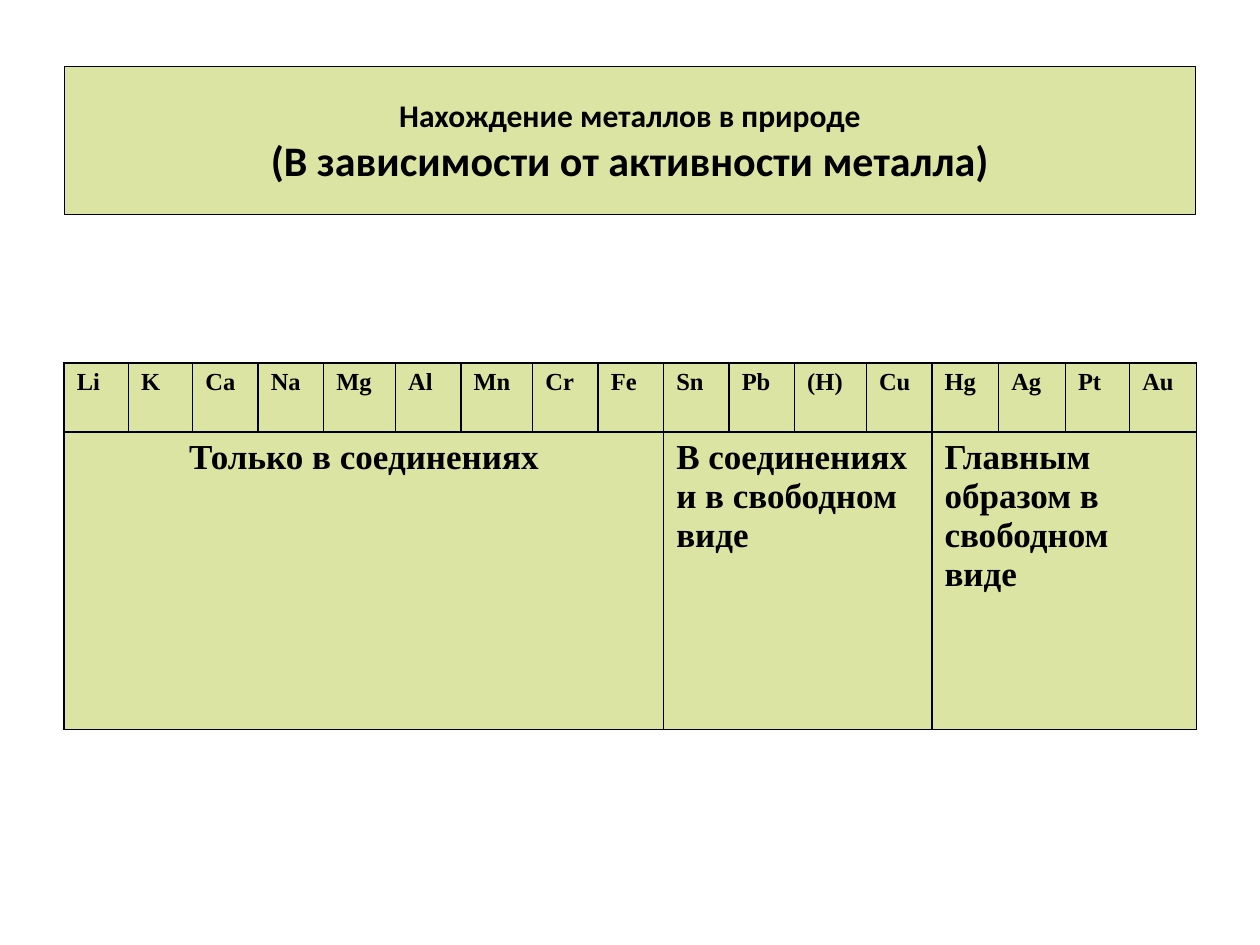
from dataclasses import dataclass

from lxml import etree
from pptx import Presentation
from pptx.dml.color import RGBColor
from pptx.enum.text import MSO_ANCHOR, MSO_AUTO_SIZE, PP_ALIGN
from pptx.oxml.ns import qn
from pptx.util import Inches, Pt

CENTER, LEFT = PP_ALIGN.CENTER, PP_ALIGN.LEFT
MIDDLE = MSO_ANCHOR.MIDDLE
NO_AUTOFIT = MSO_AUTO_SIZE.NONE
BORDER_SIDES = ("a:lnL", "a:lnR", "a:lnT", "a:lnB")

PAGE_WIDTH, PAGE_HEIGHT = 10, 7.5
MARGIN = 0.051
CONTENT = 0.898

TITLE_LINES = (
    ("Нахождение металлов в природе", "subtitle"),
    ("(В зависимости от активности металла)", "title"),
)
METALS = "Li K Ca Na Mg Al Mn Cr Fe Sn Pb (H) Cu Hg Ag Pt Au".split()
COLUMN_WIDTHS = (0.51, 0.51, 0.52, 0.52, 0.57, 0.52, 0.57, 0.52, 0.52,
                 0.52, 0.52, 0.57, 0.52, 0.53, 0.53, 0.51, 0.53)
ROW_HEIGHTS = (0.55, 2.36)
GROUPS = (
    ("Только в соединениях", 9, CENTER),
    ("В соединениях и в свободном виде", 4, LEFT),
    ("Главным образом в свободном виде", 4, LEFT),
)


@dataclass(frozen=True)
class Theme:
    panel: str = "DCE4A4"
    ink: str = "000000"
    heading_font: str = "Calibri"
    table_font: str = "Times New Roman"
    subtitle: int = 18
    title: int = 24
    metal: int = 14
    group: int = 20
    outline: float = 0.75
    border: float = 1


class SlideBuilder:
    def __init__(self, deck, theme):
        self.theme = theme
        self.page = deck.slides.add_slide(deck.slide_layouts[5])

    def place(self, left, top, width, height):
        return (Inches(left * PAGE_WIDTH), Inches(top * PAGE_HEIGHT),
                Inches(width * PAGE_WIDTH), Inches(height * PAGE_HEIGHT))

    def paint(self, target, color):
        target.fill.solid()
        target.fill.fore_color.rgb = RGBColor.from_string(color)

    def add_text(self, para, text, font, size, align):
        para.alignment = align
        span = para.add_run()
        span.text = text
        formats = {"name": font, "size": Pt(size), "bold": True}
        for name, value in formats.items():
            setattr(span.font, name, value)
        span.font.color.rgb = RGBColor.from_string(self.theme.ink)

    def title(self, lines, area):
        box = self.page.shapes.title
        box.left, box.top, box.width, box.height = self.place(*area)
        self.paint(box, self.theme.panel)
        box.line.color.rgb = RGBColor.from_string(self.theme.ink)
        box.line.width = Pt(self.theme.outline)
        frame = box.text_frame
        formats = {"word_wrap": False, "auto_size": NO_AUTOFIT,
                   "vertical_anchor": MIDDLE}
        for name, value in formats.items():
            setattr(frame, name, value)
        for index, (text, role) in enumerate(lines):
            para = frame.add_paragraph() if index else frame.paragraphs[0]
            para.space_before = Pt(0)
            self.add_text(para, text, self.theme.heading_font,
                          getattr(self.theme, role), CENTER)

    def style_cell(self, cell):
        properties = cell._tc.get_or_add_tcPr()
        for side in BORDER_SIDES:
            line = etree.SubElement(properties, qn(side),
                                    w=str(Pt(self.theme.border)))
            fill = etree.SubElement(line, qn("a:solidFill"))
            etree.SubElement(fill, qn("a:srgbClr"), val=self.theme.ink)
        self.paint(cell, self.theme.panel)

    def table(self, metals, groups, area):
        frame = self.page.shapes.add_table(
            len(ROW_HEIGHTS), len(metals), *self.place(*area))
        grid = frame.table
        for column, width in zip(grid.columns, COLUMN_WIDTHS):
            column.width = Inches(width)
        for row, height in zip(grid.rows, ROW_HEIGHTS):
            row.height = Inches(height)
        for cell in grid.iter_cells():
            self.style_cell(cell)
        for index, metal in enumerate(metals):
            self.add_text(grid.cell(0, index).text_frame.paragraphs[0], metal,
                          self.theme.table_font, self.theme.metal, LEFT)
        start = 0
        for text, count, align in groups:
            cell = grid.cell(1, start)
            cell.merge(grid.cell(1, start + count - 1))
            self.add_text(cell.text_frame.paragraphs[0], text,
                          self.theme.table_font, self.theme.group, align)
            start += count


def main():
    deck = Presentation()
    deck.slide_width = Inches(PAGE_WIDTH)
    deck.slide_height = Inches(PAGE_HEIGHT)
    builder = SlideBuilder(deck, Theme())
    builder.title(TITLE_LINES, (MARGIN, 0.07, CONTENT, 0.157))
    builder.table(METALS, GROUPS, (MARGIN, 0.384, CONTENT, 0.388))
    deck.save("out.pptx")


if __name__ == "__main__":
    main()
